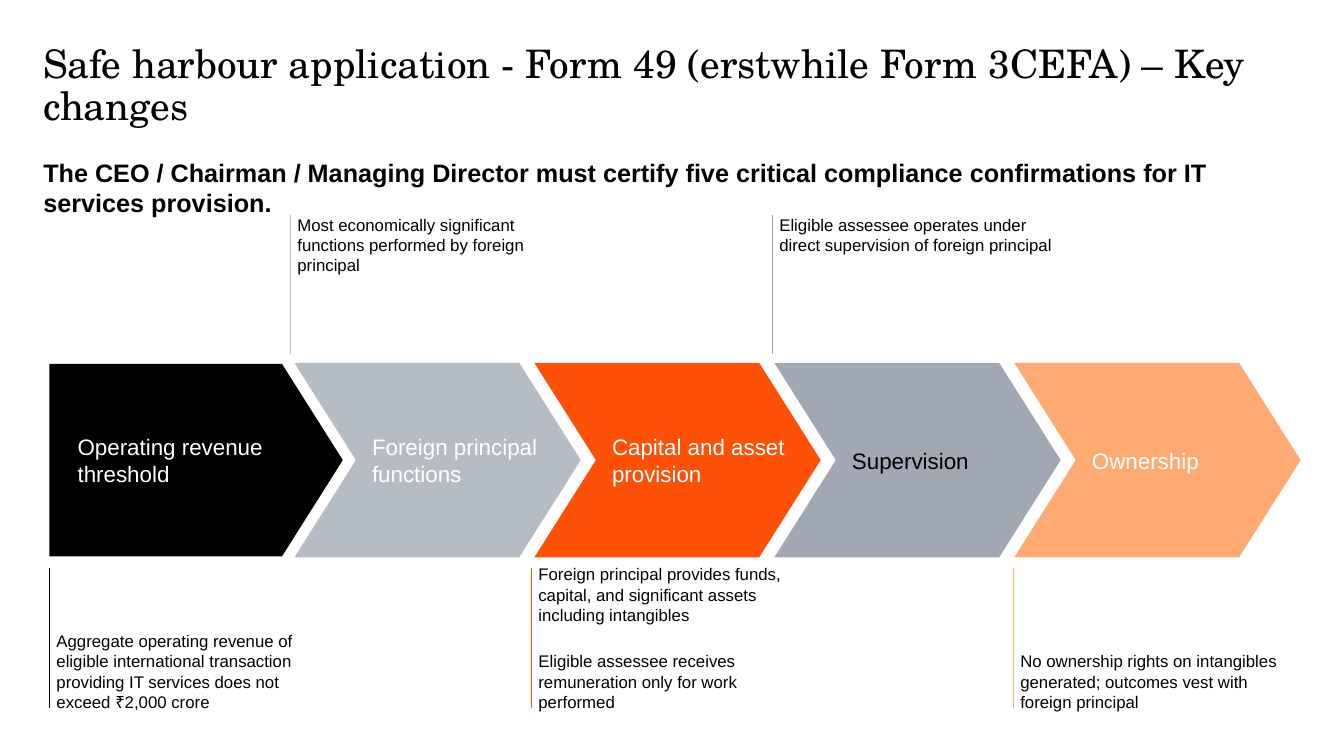
from dataclasses import dataclass
from lxml.etree import SubElement
from pptx import Presentation
from pptx.dml.color import RGBColor
from pptx.enum.shapes import MSO_CONNECTOR, MSO_SHAPE
from pptx.enum.text import MSO_ANCHOR
from pptx.oxml.ns import qn
from pptx.util import Inches, Pt


@dataclass(frozen=True)
class Theme:
    """Colours, fonts and type sizes of the slide."""
    ink: str = "000000"
    paper: str = "FFFFFF"
    mist: str = "B5BCC4"
    flame: str = "FD5108"
    slate: str = "A1A8B3"
    peach: str = "FFAA72"
    serif: str = "TeX Gyre Schola"
    sans: str = "Arial"
    title: int = 28
    lead: int = 18
    label: int = 16
    note: int = 12
    rule: float = 0.75


THEME = Theme()
STEPS = [
    ("Operating revenue threshold", THEME.ink, THEME.paper,
     ["Aggregate operating revenue of eligible international transaction "
      "providing IT services does not exceed ₹2,000 crore"]),
    ("Foreign principal functions", THEME.mist, THEME.paper,
     ["Most economically significant functions performed by foreign principal"]),
    ("Capital and asset provision", THEME.flame, THEME.paper,
     ["Foreign principal provides funds, capital, and significant assets "
      "including intangibles",
      "Eligible assessee receives remuneration only for work performed"]),
    ("Supervision", THEME.slate, THEME.ink,
     ["Eligible assessee operates under direct supervision of foreign principal"]),
    ("Ownership", THEME.peach, THEME.paper,
     ["No ownership rights on intangibles generated; outcomes vest with "
      "foreign principal"]),
]


def write(slide, box, lines, size, color=THEME.ink, face=THEME.sans, bold=False,
          anchor=MSO_ANCHOR.TOP, inset=(0, 0, 0, 0), lead=None, gap=0):
    """Place a wrapped text box with one paragraph per line."""
    frame = slide.shapes.add_textbox(*map(Inches, box)).text_frame
    frame.word_wrap = True
    frame.vertical_anchor = anchor
    (frame.margin_left, frame.margin_top,
     frame.margin_right, frame.margin_bottom) = map(Inches, inset)
    for i, line in enumerate(lines):
        para = frame.add_paragraph() if i else frame.paragraphs[0]
        para.text = line
        if lead:
            para.line_spacing = lead
        if i:
            para.space_before = Pt(gap)
        font = para.font
        font.name, font.size, font.bold = face, Pt(size), bold
        font.color.rgb = RGBColor.from_string(color)


def stem(slide, x, top, tall, color):
    """Draw a thin vertical rule."""
    line = slide.shapes.add_connector(
        MSO_CONNECTOR.STRAIGHT, *map(Inches, (x, top, x, top + tall)))
    line.line.color.rgb = RGBColor.from_string(color)
    line.line.width = Pt(THEME.rule)
    SubElement(line._element.spPr, qn("a:effectLst"))


def arrow(slide, box, color, first):
    """Draw one block of the arrow chain."""
    kind = MSO_SHAPE.PENTAGON if first else MSO_SHAPE.CHEVRON
    shape = slide.shapes.add_shape(kind, *map(Inches, box))
    shape.adjustments[0] = 0.316
    shape.shadow.inherit = False
    shape.fill.solid()
    shape.fill.fore_color.rgb = RGBColor.from_string(color)
    shape.line.fill.background()


def head(slide, box):
    """Place the title and the lead sentence."""
    x, y, w, h = box
    row = h / 20
    write(slide, (x, y, w, 10 * row),
          ["Safe harbour application - Form 49 (erstwhile Form 3CEFA) – Key changes"],
          THEME.title, face=THEME.serif, lead=0.9)
    write(slide, (x, y + 11.2 * row, w, 8 * row),
          ["The CEO / Chairman / Managing Director must certify five critical "
           "compliance confirmations for IT services provision."],
          THEME.lead, bold=True, inset=(0, 0, 0.1, 0))


def flow(slide, box):
    """Place the arrow chain, its labels and the notes above and below."""
    x, y, w, h = box
    col, row = w / 124, h / 50
    for i, (name, fill, ink, notes) in enumerate(STEPS):
        first = i == 0
        dip = 0.1 if first else 0
        left = x if first else x + (0.5 + 23.8 * i) * col
        wide = 29.1 if first else 28.4
        arrow(slide, (left, y + (14.7 + dip) * row, wide * col,
                      (19.3 - 2 * dip) * row), fill, first)
        tall = 7.1 if " " in name else 4.4
        write(slide, (left + (2 if first else 6.9) * col,
                      y + (24.35 - tall / 2) * row,
                      (20.6 if first else 18.9) * col, tall * row),
              [name], THEME.label, ink, anchor=MSO_ANCHOR.MIDDLE,
              inset=(0.08, 0.08, 0.07, 0.08))
        above = i % 2
        edge = x + 23.9 * i * col
        stem(slide, edge, y + (0 if above else 35.1) * row, 13.8 * row, fill)
        write(slide, (edge, y + (0 if above else 41.4) * row,
                      (28.3 if above else 27) * col, 7.9 * row),
              notes, THEME.note, inset=(0.07, 0, 0, 0), gap=19,
              anchor=MSO_ANCHOR.TOP if above else MSO_ANCHOR.BOTTOM)


def main():
    """Build and save the slide."""
    deck = Presentation()
    deck.slide_width, deck.slide_height = Inches(13.33), Inches(7.5)
    slide = deck.slides.add_slide(deck.slide_layouts[6])
    head(slide, (0.43, 0.44, 12.46, 2))
    flow(slide, (0.49, 2.13, 12.4, 5))
    deck.save("out.pptx")


if __name__ == "__main__":
    main()
